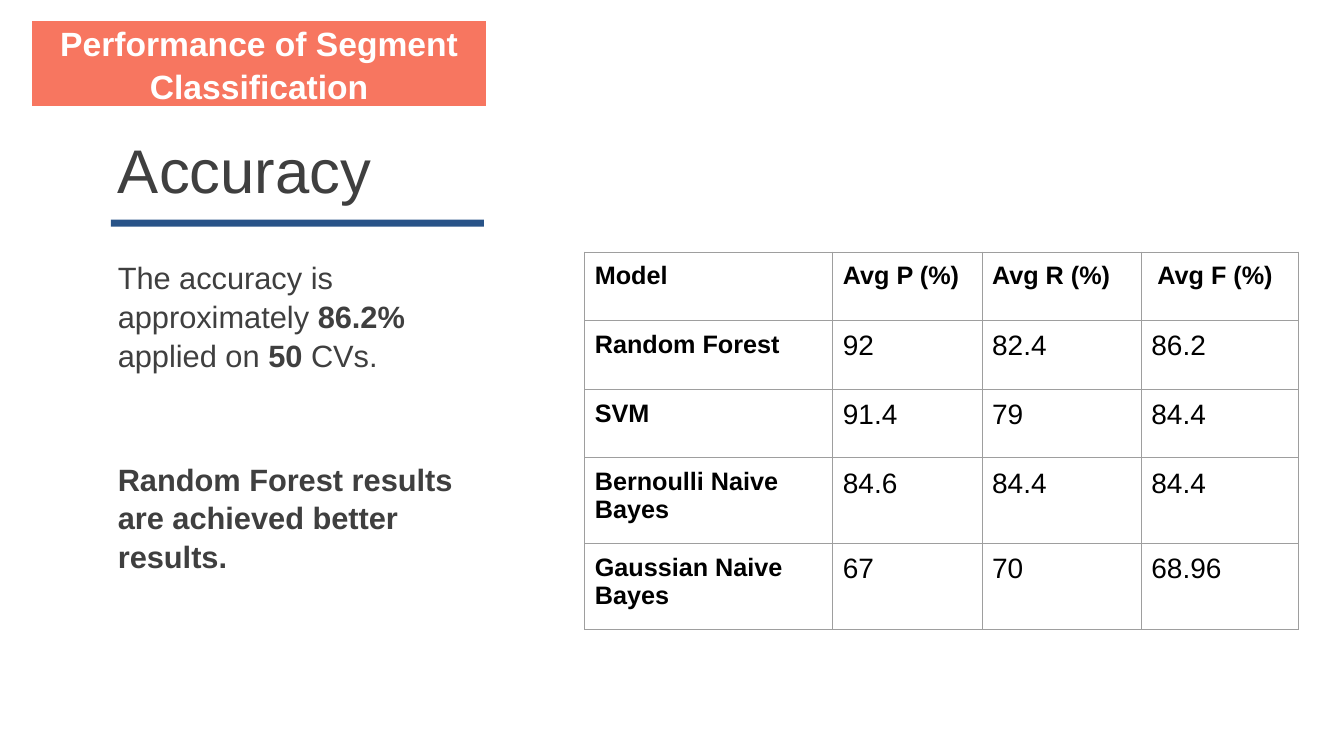
import pptx
import pptx.dml.color
import pptx.enum.shapes
import pptx.enum.text
import pptx.oxml
import pptx.oxml.ns
import pptx.util
from dataclasses import dataclass

Inches = pptx.util.Inches
Align = pptx.enum.text.PP_ALIGN
Anchor = pptx.enum.text.MSO_ANCHOR


@dataclass(frozen=True)
class Theme:
    font: str = "Arial"
    text: str = "3F3F3F"
    table_text: str = "000000"
    border: str = "9E9E9E"
    rule: str = "285388"
    banner: str = "F77660"
    banner_text: str = "FFFFFF"
    title_size: int = 44
    banner_size: int = 24
    body_size: int = 22
    label_size: int = 18
    value_size: int = 20
    line_spacing: float = 1.05


THEME = Theme()
COLUMN_WIDTHS = (2.46, 1.48, 1.58, 1.56)
ROW_HEIGHTS = (0.68, 0.68, 0.68, 0.85, 0.85)
RESULTS = (
    ("Model", "Avg P (%)", "Avg R (%)", " Avg F (%)"),
    ("Random Forest", "92", "82.4", "86.2"),
    ("SVM", "91.4", "79", "84.4"),
    ("Bernoulli Naive Bayes", "84.6", "84.4", "84.4"),
    ("Gaussian Naive Bayes", "67", "70", "68.96"),
)


def rgb(color):
    return pptx.dml.color.RGBColor.from_string(color)


def apply_format(target, values):
    for name, value in values.items():
        setattr(target, name, value)


def write_text(text_frame, runs, size, color, align=Align.LEFT, spacing=None):
    """Fill one paragraph with (text, bold) runs."""
    paragraph = text_frame.paragraphs[0]
    apply_format(paragraph, {"alignment": align, "line_spacing": spacing})
    for text, bold in runs:
        run = paragraph.add_run()
        run.text = text
        apply_format(run.font, {"name": THEME.font, "size": pptx.util.Pt(size), "bold": bold})
        run.font.color.rgb = rgb(color)


def set_frame(text_frame, anchor):
    apply_format(text_frame, {
        "word_wrap": True,
        "auto_size": pptx.enum.text.MSO_AUTO_SIZE.NONE,
        "vertical_anchor": anchor,
        "margin_left": Inches(0.1), "margin_right": Inches(0.1),
        "margin_top": Inches(0.05), "margin_bottom": Inches(0.05),
    })


def add_block(slide, box, color):
    block = slide.shapes.add_shape(
        pptx.enum.shapes.MSO_SHAPE.RECTANGLE, *map(Inches, box))
    block.shadow.inherit = False
    block.fill.solid()
    block.fill.fore_color.rgb = rgb(color)
    block.line.fill.background()
    return block


def add_title(slide, box):
    """Place the title with its rule just below."""
    left, top, width, height = box
    title = slide.shapes.title
    apply_format(title, dict(zip(("left", "top", "width", "height"), map(Inches, box))))
    set_frame(title.text_frame, Anchor.MIDDLE)
    write_text(title.text_frame, [("Accuracy", False)], THEME.title_size, THEME.text,
               Align.JUSTIFY)
    add_block(slide, (left + 0.03, top + height + 0.08, width - 0.05, 0.07), THEME.rule)


def add_body(slide, box, runs):
    body = slide.shapes.add_textbox(*map(Inches, box))
    set_frame(body.text_frame, Anchor.TOP)
    write_text(body.text_frame, runs, THEME.body_size, THEME.text,
               spacing=THEME.line_spacing)


def add_banner(slide, box):
    banner = add_block(slide, box, THEME.banner)
    set_frame(banner.text_frame, Anchor.MIDDLE)
    write_text(banner.text_frame, [("Performance of Segment Classification", True)],
               THEME.banner_size, THEME.banner_text, Align.CENTER, THEME.line_spacing)


def set_borders(cell):
    properties = cell._tc.get_or_add_tcPr()
    for index, side in enumerate(("lnL", "lnR", "lnT", "lnB")):
        properties.insert(index, pptx.oxml.parse_xml(
            f'<a:{side} {pptx.oxml.ns.nsdecls("a")} w="{pptx.util.Pt(0.75)}">'
            f'<a:solidFill><a:srgbClr val="{THEME.border}"/></a:solidFill></a:{side}>'))


def add_results(slide, left, top):
    frame = slide.shapes.add_table(
        len(ROW_HEIGHTS), len(COLUMN_WIDTHS), Inches(left), Inches(top),
        Inches(sum(COLUMN_WIDTHS)), Inches(sum(ROW_HEIGHTS)))
    table = frame.table
    apply_format(table, {"first_row": False, "horz_banding": False})
    for column, width in zip(table.columns, COLUMN_WIDTHS):
        column.width = Inches(width)
    for row, height in zip(table.rows, ROW_HEIGHTS):
        row.height = Inches(height)
    margins = {f"margin_{side}": Inches(0.1) for side in ("left", "right", "top", "bottom")}
    for row_index, values in enumerate(RESULTS):
        for column_index, value in enumerate(values):
            cell = table.cell(row_index, column_index)
            is_label = row_index == 0 or column_index == 0
            apply_format(cell, margins)
            cell.fill.background()
            write_text(cell.text_frame, [(value, is_label)],
                       THEME.label_size if is_label else THEME.value_size,
                       THEME.table_text)
            set_borders(cell)


def add_accuracy_slide(presentation):
    slide = presentation.slides.add_slide(presentation.slide_layouts[5])
    add_title(slide, (1.07, 1.26, 3.75, 0.84))
    add_body(slide, (1.07, 2.5, 3.93, 1.36), [
        ("The accuracy is approximately ", False), ("86.2%", True),
        (" applied on ", False), ("50", True), (" CVs.", False)])
    add_results(slide, 5.8, 2.5)
    add_banner(slide, (0.32, 0.21, 4.5, 0.84))
    add_body(slide, (1.07, 4.5, 3.75, 1.28),
             [("Random Forest results are achieved better results.", True)])


def main():
    presentation = pptx.Presentation()
    presentation.slide_width = Inches(13.33)
    presentation.slide_height = Inches(7.5)
    add_accuracy_slide(presentation)
    presentation.save("out.pptx")


if __name__ == "__main__":
    main()
